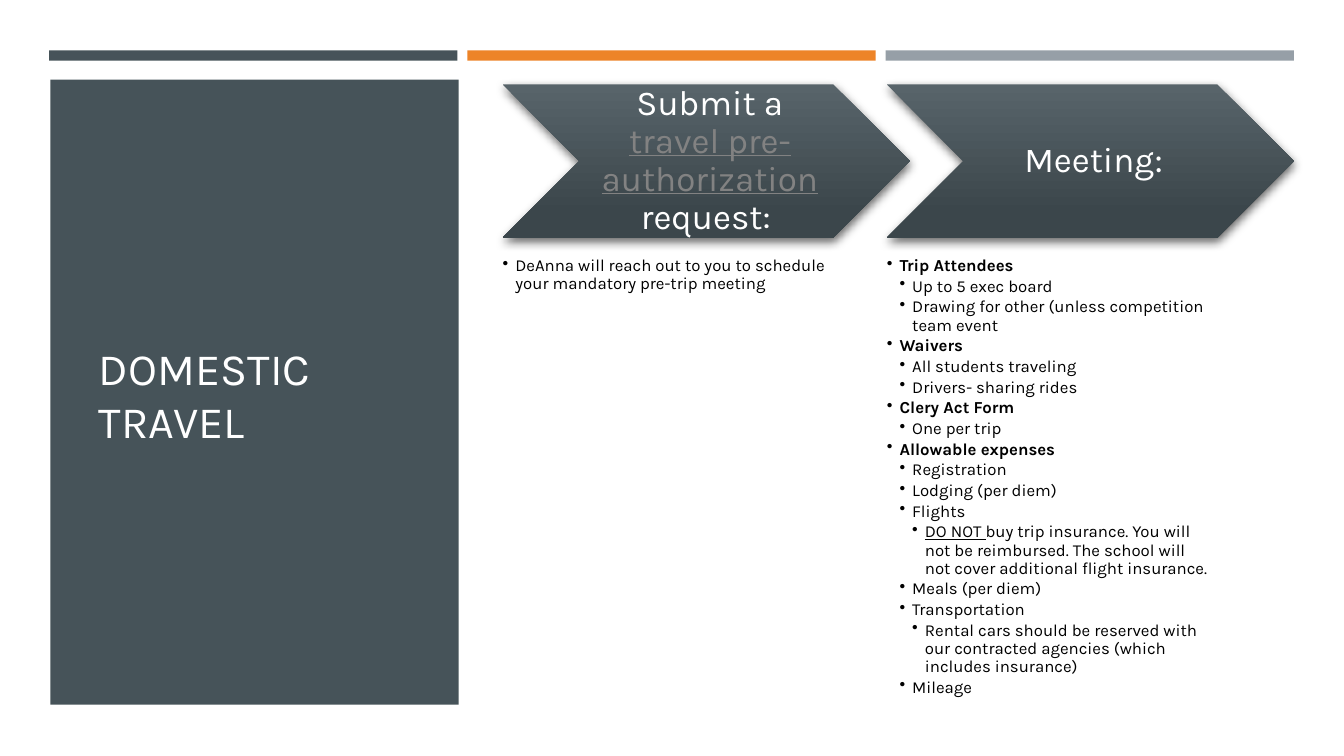
from dataclasses import dataclass

from lxml.etree import SubElement
from pptx import Presentation
from pptx.dml.color import RGBColor
from pptx.enum.shapes import MSO_SHAPE as Shape
from pptx.enum.text import MSO_ANCHOR as Anchor, PP_ALIGN as Align
from pptx.oxml.ns import qn
from pptx.util import Cm, Pt


@dataclass(frozen=True)
class Theme:
    font: str = "Karla"
    colon_font: str = "Calibri"
    white: str = "FFFFFF"
    black: str = "000000"
    slate: str = "465359"
    orange: str = "ED8428"
    grey: str = "969FA7"
    link: str = "828282"
    gradient: tuple = ((0, "58646A"), (0.84, "3B464B"))
    title_size: int = 32
    step_size: int = 25
    body_size: int = 12


theme = Theme()


def write(para, text, size=theme.body_size, color=theme.black,
          font=theme.font, bold=False, underline=False):
    span = para.add_run()
    span.text = text
    span.font.size = Pt(size)
    span.font.name = font
    span.font.bold = bold
    span.font.underline = underline
    span.font.color.rgb = RGBColor.from_string(color)


def add_block(kind, left, top, width, height, color):
    block = slide.shapes.add_shape(kind, Cm(left), Cm(top), Cm(width), Cm(height))
    block.shadow.inherit = False
    block.line.fill.background()
    block.fill.solid()
    block.fill.fore_color.rgb = RGBColor.from_string(color)
    return block


deck = Presentation()
deck.slide_width, deck.slide_height = Cm(33.87), Cm(19.05)
slide = deck.slides.add_slide(deck.slide_layouts[5])

# Background, title panel and the three bars
add_block(Shape.RECTANGLE, 0, 1.52, 33.87, 17.53, theme.white)
panel = add_block(Shape.RECTANGLE, 1.27, 2.01, 10.29, 15.75, theme.slate)
for index, color in enumerate((theme.slate, theme.orange, theme.grey)):
    add_block(Shape.RECTANGLE, 1.24 + index * 10.54, 1.27, 10.29, 0.26, color)

title = slide.shapes.title
title.left, title.top, title.width, title.height = Cm(2.24), Cm(3.35), Cm(8.59), Cm(13.16)
title.text_frame.vertical_anchor = Anchor.MIDDLE
title.text_frame.word_wrap = True
title_para = title.text_frame.paragraphs[0]
title_para.alignment = Align.LEFT
write(title_para, "DOMESTIC TRAVEL", size=theme.title_size, color=theme.white)
panel.element.addnext(title.element)

# Each step: heading spans, then (level, text) bullets; level 0 is bold in the meeting list
steps = [
    (
        [("Submit a ", {}),
         ("travel pre-authorization ", {"color": theme.link, "underline": True}),
         ("request: ", {})],
        [(0, "DeAnna will reach out to you to schedule your mandatory pre-trip meeting")],
        False,
    ),
    (
        [("Meeting", {}), (":", {"font": theme.colon_font})],
        [
            (0, "Trip Attendees"),
            (1, "Up to 5 exec board"),
            (1, "Drawing for other (unless competition team event"),
            (0, "Waivers"),
            (1, "All students traveling"),
            (1, "Drivers- sharing rides"),
            (0, "Clery Act Form"),
            (1, "One per trip"),
            (0, "Allowable expenses"),
            (1, "Registration"),
            (1, "Lodging (per diem)"),
            (1, "Flights"),
            (2, "DO NOT |buy trip insurance. You will not be reimbursed. "
                "The school will not cover additional flight insurance."),
            (1, "Meals (per diem)"),
            (1, "Transportation"),
            (2, "Rental cars should be reserved with our contracted agencies "
                "(which includes insurance)"),
            (1, "Mileage"),
        ],
        True,
    ),
]

for index, (heading, bullets, bold_top) in enumerate(steps):
    left = 12.67 + index * 9.68

    chevron = add_block(Shape.CHEVRON, left, 2.13, 10.26, 3.86, theme.slate)
    chevron.fill.gradient()
    chevron.fill.gradient_angle = 270
    for stop, (position, color) in zip(chevron.fill.gradient_stops, theme.gradient):
        stop.position = position
        stop.color.rgb = RGBColor.from_string(color)
    effects = chevron.element.spPr.find(qn("a:effectLst"))
    shadow = SubElement(effects, qn("a:outerShdw"), blurRad=str(Pt(7)), dist=str(Pt(3)),
                        dir=str(84 * 60000), rotWithShape="0")
    shade = SubElement(shadow, qn("a:srgbClr"), val=theme.black)
    SubElement(shade, qn("a:alpha"), val="60000")

    frame = chevron.text_frame
    frame.word_wrap = True
    frame.vertical_anchor = Anchor.MIDDLE
    frame.margin_left = Cm(0.28)
    frame.margin_right = frame.margin_top = frame.margin_bottom = Cm(0.1)
    para = frame.paragraphs[0]
    para.alignment = Align.CENTER
    para.line_spacing = 0.9
    for text, style in heading:
        write(para, text, **{"size": theme.step_size, "color": theme.white, **style})

    box = slide.shapes.add_textbox(Cm(left), Cm(6.48), Cm(8.2), Cm(10.95))
    frame = box.text_frame
    frame.word_wrap = True
    frame.margin_left = frame.margin_right = frame.margin_top = frame.margin_bottom = 0
    for row, (level, text) in enumerate(bullets):
        para = frame.add_paragraph() if row else frame.paragraphs[0]
        para.level = level
        para.line_spacing = 0.9
        para.space_after = Pt(1.8)
        props = para._p.get_or_add_pPr()
        props.set("marL", str(Cm(0.32 * (level + 1))))
        props.set("indent", str(-Cm(0.32)))
        SubElement(props, qn("a:buChar"), char="•")
        warning, divider, rest = text.rpartition("|")
        if divider:
            write(para, warning, underline=True)
        write(para, rest, bold=bold_top and level == 0)

deck.save("out.pptx")
